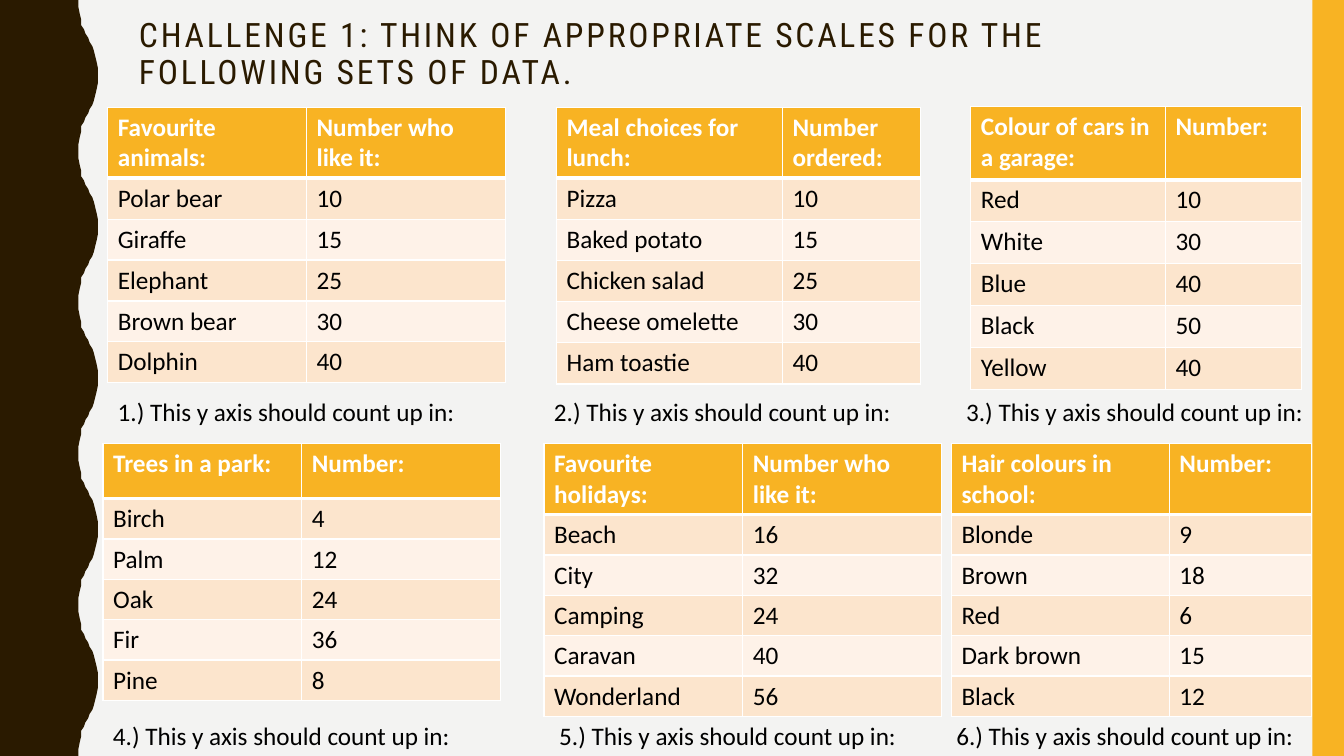
from lxml import etree
from pptx import Presentation
from pptx.dml.color import RGBColor
from pptx.enum.shapes import MSO_SHAPE
from pptx.oxml.ns import qn
from pptx.util import Pt

RECTANGLE = MSO_SHAPE.RECTANGLE

BACKGROUND = RGBColor(0xF3, 0xF3, 0xF2)
BROWN = RGBColor(0x2A, 0x1A, 0x00)
AMBER = RGBColor(0xF8, 0xB3, 0x23)
PEACH = RGBColor(0xFC, 0xE5, 0xCD)
CREAM = RGBColor(0xFE, 0xF2, 0xE8)
WHITE = RGBColor(0xFF, 0xFF, 0xFF)
BLACK = RGBColor(0x00, 0x00, 0x00)

BODY_FONT = "Calibri"
TITLE_FONT = "Roboto Condensed"

SLIDE_WIDTH, SLIDE_HEIGHT = 960, 540
WAVE_PERIOD, WAVE_COUNT = 108, 5
# (x, y) from a trough of the wave to the next crest
WAVE_RISE = [
    (56, 0), (56.2, 5), (56.9, 10), (57.6, 14.4), (58.5, 18), (59.8, 21),
    (61.2, 24), (62.6, 27), (64.1, 30), (65.5, 33), (67, 36), (68.4, 39.6),
    (69.3, 44), (69.8, 49), (70, 54),
]

# (left, top), column widths, header height, row height, rows
DATA_SETS = [
    ((77, 76.5), (142, 142), 50.8, 29.25, [
        ("Favourite animals:", "Number who like it:"),
        ("Polar bear", "10"), ("Giraffe", "15"), ("Elephant", "25"),
        ("Brown bear", "30"), ("Dolphin", "40")]),
    ((397.5, 76.5), (161.5, 98.5), 50.8, 29.4, [
        ("Meal choices for lunch:", "Number ordered:"),
        ("Pizza", "10"), ("Baked potato", "15"), ("Chicken salad", "25"),
        ("Cheese omelette", "30"), ("Ham toastie", "40")]),
    ((693.5, 76), (139, 97.2), 52.4, 30, [
        ("Colour of cars in a garage:", "Number:"),
        ("Red", "10"), ("White", "30"), ("Blue", "40"),
        ("Black", "50"), ("Yellow", "40")]),
    ((73.6, 316.8), (142, 142), 39.4, 28.8, [
        ("Trees in a park:", "Number:"),
        ("Birch", "4"), ("Palm", "12"), ("Oak", "24"),
        ("Fir", "36"), ("Pine", "8")]),
    ((388.6, 316.8), (142, 142), 50.8, 28.8, [
        ("Favourite holidays:", "Number who like it:"),
        ("Beach", "16"), ("City", "32"), ("Camping", "24"),
        ("Caravan", "40"), ("Wonderland", "56")]),
    ((679.6, 316.8), (155.7, 101.6), 50.8, 28.8, [
        ("Hair colours in school:", "Number:"),
        ("Blonde", "9"), ("Brown", "18"), ("Red", "6"),
        ("Dark brown", "15"), ("Black", "12")]),
]
QUESTION_SPOTS = [(77, 279.5), (388.6, 279.5), (683, 279.5),
                  (73.6, 511), (392.4, 511), (676, 511)]


def paint(shape, color):
    shape.shadow.inherit = False
    shape.fill.solid()
    shape.fill.fore_color.rgb = color
    shape.line.fill.background()


def add_run(paragraph, text, size, font, color, bold=False):
    run = paragraph.add_run()
    run.text = text
    run.font.size = Pt(size)
    run.font.name = font
    run.font.color.rgb = color
    run.font.bold = bold
    return run


def add_text_box(slide, left, top, width, height):
    """Add a wrapping text box and return its first paragraph."""
    frame = slide.shapes.add_textbox(Pt(left), Pt(top), Pt(width), Pt(height)).text_frame
    frame.word_wrap = True
    return frame.paragraphs[0]


def add_wavy_edge(slide):
    fall = [(x, WAVE_PERIOD - y) for x, y in reversed(WAVE_RISE[1:-1])]
    edge = [(x, y + wave * WAVE_PERIOD)
            for wave in range(WAVE_COUNT) for x, y in WAVE_RISE + fall]
    edge += [(WAVE_RISE[0][0], SLIDE_HEIGHT), (0, SLIDE_HEIGHT)]
    outline = slide.shapes.build_freeform(0, 0, scale=Pt(1))
    outline.add_line_segments(edge, close=True)
    paint(outline.convert_to_shape(), BROWN)


def add_side_bar(slide):
    left = 937.5
    bar = slide.shapes.add_shape(RECTANGLE, Pt(left), 0,
                                 Pt(SLIDE_WIDTH - left), Pt(SLIDE_HEIGHT))
    paint(bar, AMBER)


def add_title(slide, text):
    paragraph = add_text_box(slide, 92.2, 10, 801.4, 117.4)
    paragraph.line_spacing = 0.9
    run = add_run(paragraph, text, 24, TITLE_FONT, BROWN)
    run.font._element.set("spc", "200")


def add_borders(cell, top, bottom):
    """Draw white borders, with the top and bottom widths in points."""
    properties = cell._tc.get_or_add_tcPr()
    for side, width in (("L", 1), ("R", 1), ("T", top), ("B", bottom)):
        line = etree.SubElement(properties, qn(f"a:ln{side}"), w=str(Pt(width)))
        fill = etree.SubElement(line, qn("a:solidFill"))
        etree.SubElement(fill, qn("a:srgbClr"), val=str(WHITE))


def add_data_table(slide, corner, column_widths, header_height, row_height, rows):
    left, top = corner
    height = header_height + row_height * (len(rows) - 1)
    table = slide.shapes.add_table(len(rows), len(column_widths), Pt(left), Pt(top),
                                   Pt(sum(column_widths)), Pt(height)).table
    for column, width in zip(table.columns, column_widths):
        column.width = Pt(width)
    for index, values in enumerate(rows):
        header = index == 0
        table.rows[index].height = Pt(header_height if header else row_height)
        band = AMBER if header else PEACH if index % 2 else CREAM
        for cell, value in zip(table.rows[index].cells, values):
            add_borders(cell, 3 if index == 1 else 1, 3 if header else 1)
            cell.fill.solid()
            cell.fill.fore_color.rgb = band
            add_run(cell.text_frame.paragraphs[0], value, 18, BODY_FONT,
                    WHITE if header else BLACK, header)


def add_question(slide, number, left, top):
    paragraph = add_text_box(slide, left, top, 276.5, 29)
    add_run(paragraph, f"{number}.) This y axis should count up in:", 18, BODY_FONT, BLACK)


def main():
    deck = Presentation()
    deck.slide_width, deck.slide_height = Pt(SLIDE_WIDTH), Pt(SLIDE_HEIGHT)
    slide = deck.slides.add_slide(deck.slide_layouts[6])
    slide.background.fill.solid()
    slide.background.fill.fore_color.rgb = BACKGROUND

    add_wavy_edge(slide)
    add_side_bar(slide)
    add_title(slide, "CHALLENGE 1: THINK OF APPROPRIATE SCALES FOR THE "
                     "FOLLOWING SETS OF DATA.")
    for data_set in DATA_SETS:
        add_data_table(slide, *data_set)
    for number, (left, top) in enumerate(QUESTION_SPOTS, start=1):
        add_question(slide, number, left, top)
    deck.save("out.pptx")


if __name__ == "__main__":
    main()
